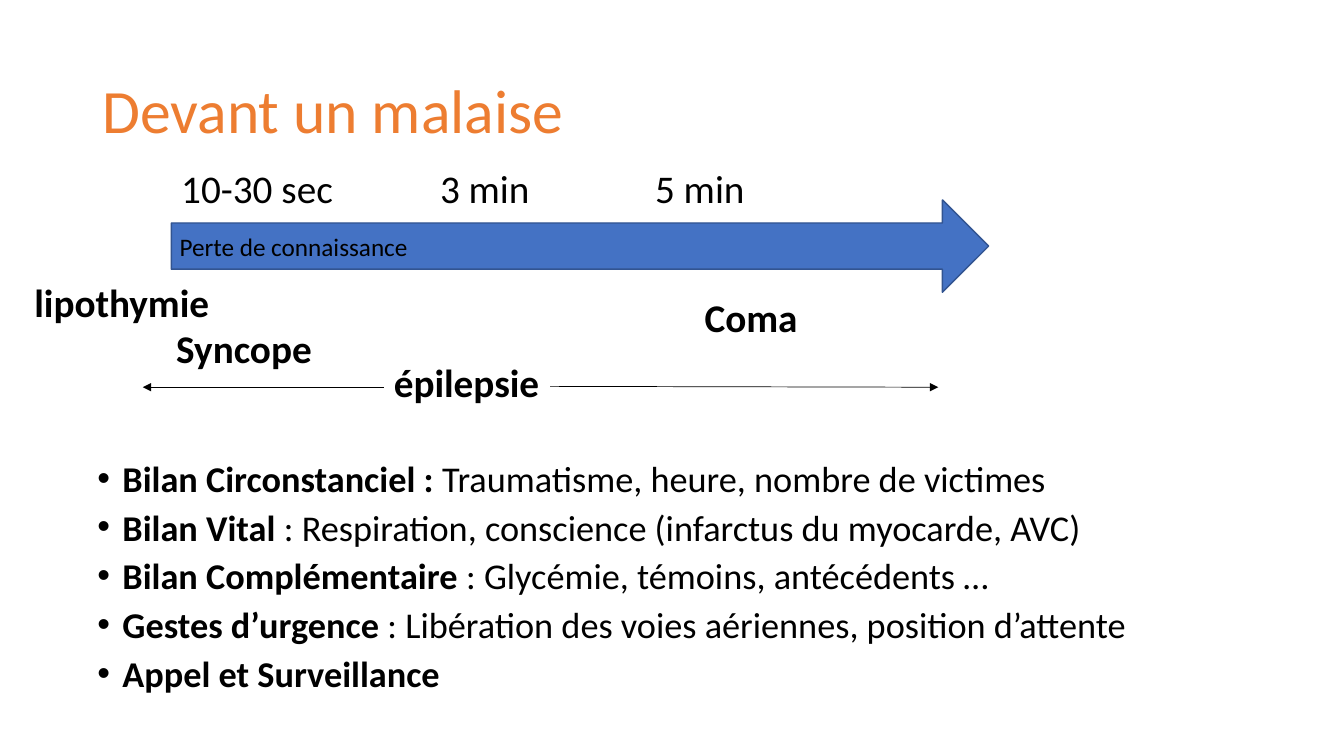
import pptx
import pptx.util
import pptx.dml.color
import pptx.enum.shapes
import pptx.enum.text
import pptx.oxml
import pptx.oxml.ns
from dataclasses import dataclass
from lxml import etree

COLS, ROWS = 160, 90


@dataclass(frozen=True)
class Theme:
    font: str = "Calibri"
    ink: str = "000000"
    accent: str = "ED7D31"
    fill: str = "4472C4"
    edge: str = "325491"
    title: float = 44
    label: float = 28
    body: float = 25.9
    note: float = 18


THEME = Theme()
deck = pptx.Presentation()
deck.slide_width = pptx.util.Inches(13.33)
deck.slide_height = pptx.util.Inches(7.5)


def cell(col, row):
    """Turn grid columns and rows into slide lengths."""
    return int(deck.slide_width * col / COLS), int(deck.slide_height * row / ROWS)


def color(code):
    return pptx.dml.color.RGBColor.from_string(code)


def style(run, size, bold=False, tint=THEME.ink):
    run.font.name = THEME.font
    run.font.size = pptx.util.Pt(size)
    run.font.bold = bold
    run.font.color.rgb = color(tint)


def add_box(slide, box):
    col, row, wide, high = box
    frame = slide.shapes.add_textbox(*cell(col, row), *cell(wide, high)).text_frame
    frame.word_wrap = True
    return frame


def add_text(slide, box, text, size, bold=False, tint=THEME.ink):
    frame = add_box(slide, box)
    frame.text = text
    style(frame.paragraphs[0].runs[0], size, bold, tint)
    return frame


def add_arrow(slide, start, end):
    line = slide.shapes.add_connector(
        pptx.enum.shapes.MSO_CONNECTOR.STRAIGHT, *cell(*start), *cell(*end))
    line.line.color.rgb = color(THEME.ink)
    line.line.width = pptx.util.Pt(0.5)
    tail = etree.SubElement(line.line._get_or_add_ln(), pptx.oxml.ns.qn("a:tailEnd"))
    tail.set("type", "triangle")
    etree.SubElement(line._element.spPr, pptx.oxml.ns.qn("a:effectLst"))


def add_title(slide, box, text):
    frame = add_text(slide, box, text, THEME.title, tint=THEME.accent)
    frame.vertical_anchor = pptx.enum.text.MSO_ANCHOR.MIDDLE
    frame.paragraphs[0].line_spacing = 0.9


def add_timeline(slide, box, times, states, note):
    left, top, wide, high = box
    start = 17.5

    # Block arrow from the onset to the right edge
    arrow = slide.shapes.add_shape(
        pptx.enum.shapes.MSO_SHAPE.RIGHT_ARROW,
        *cell(left + start, top + 4.8), *cell(wide - start, 11))
    arrow.shadow.inherit = False
    arrow.fill.solid()
    arrow.fill.fore_color.rgb = color(THEME.fill)
    arrow.line.color.rgb = color(THEME.edge)
    arrow.line.width = pptx.util.Pt(1)
    add_text(slide, (left + start - 0.2, top + 7.9, 32.6, 4.8), note, THEME.note)

    # Durations above, states below
    for text, col, span in times:
        add_text(slide, (left + col, top, span, 6.8), text, THEME.label)
    for text, col, row, span in states:
        add_text(slide, (left + col, top + row, span, 6.8), text, THEME.label, True)

    # Extent of the epilepsy
    base = top + 27.1
    add_arrow(slide, (left + 42.8, base), (left + 14.1, base))
    add_arrow(slide, (left + 62.6, base - 0.1), (left + 108.8, base))


def add_list(slide, box, items):
    frame = add_box(slide, box)
    for index, (lead, rest) in enumerate(items):
        para = frame.add_paragraph() if index else frame.paragraphs[0]
        para.line_spacing = 0.8
        para.space_before = pptx.util.Pt(10 if index else 0)
        props = para._p.get_or_add_pPr()
        indent = pptx.util.Inches(0.25)
        props.set("marL", str(indent))
        props.set("indent", str(-indent))
        face = etree.SubElement(props, pptx.oxml.ns.qn("a:buFont"))
        face.set("typeface", "Arial")
        mark = etree.SubElement(props, pptx.oxml.ns.qn("a:buChar"))
        mark.set("char", "•")
        for text, bold in ((lead, True), (rest, False)):
            if text:
                run = para.add_run()
                run.text = text
                style(run, THEME.body, bold)


def main():
    slide = deck.slides.add_slide(deck.slide_layouts[6])
    add_title(slide, (11, 4.8, 138, 17.4), "Devant un malaise")
    add_timeline(
        slide, (2.9, 19, 114.8, 30),
        # text, column, width
        [("10-30 sec", 17.5, 21), ("3 min", 48.3, 13.7), ("5 min", 73.9, 13.7)],
        # text, column, row, width
        [("lipothymie", 0, 13.5, 25.2), ("Syncope", 16.9, 19, 21.8),
         ("épilepsie", 42.8, 23.1, 21.8), ("Coma", 79.8, 15.3, 21.8)],
        "Perte de connaissance")
    add_list(slide, (10.4, 54.7, 144.5, 29.6), [
        ("Bilan Circonstanciel : ", "Traumatisme, heure, nombre de victimes"),
        ("Bilan Vital ", ": Respiration, conscience (infarctus du myocarde, AVC)"),
        ("Bilan Complémentaire ", ": Glycémie, témoins, antécédents …"),
        ("Gestes d’urgence ", ": Libération des voies aériennes, position d’attente"),
        ("Appel et Surveillance", ""),
    ])
    deck.save("out.pptx")


if __name__ == "__main__":
    main()
